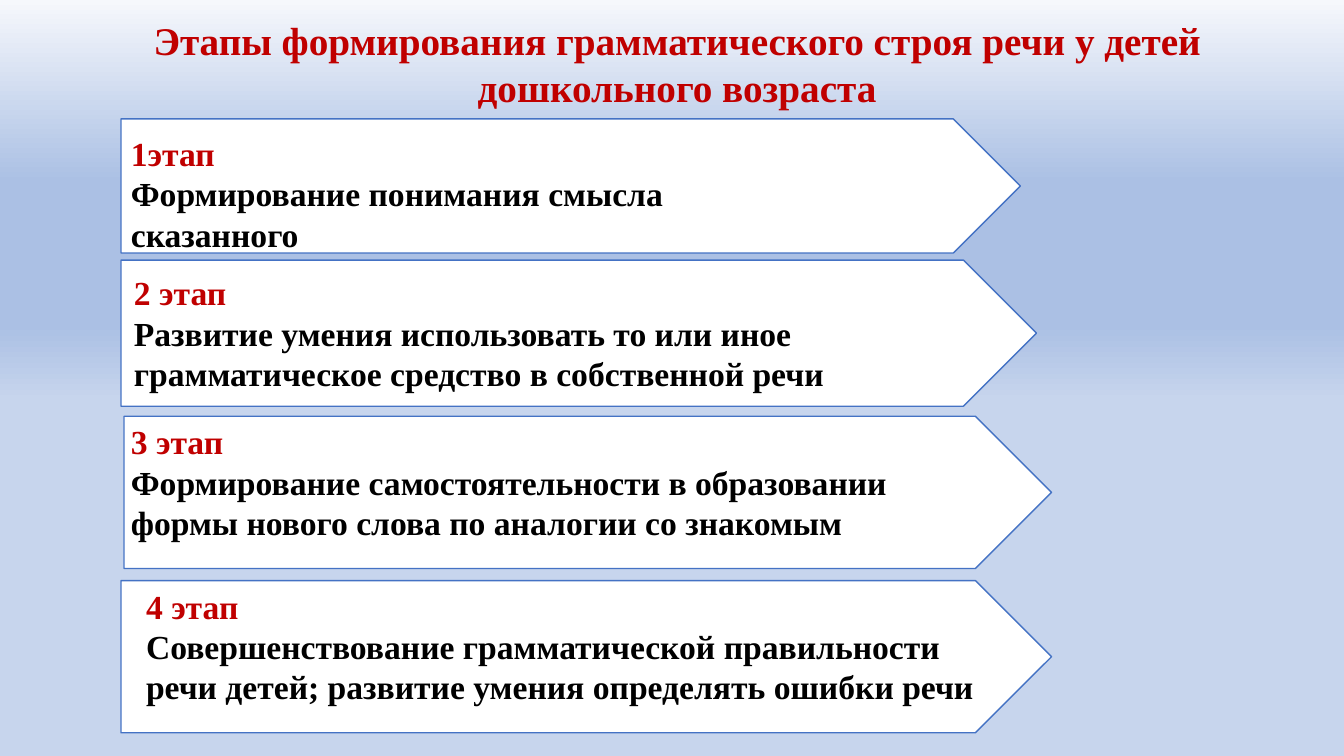
"""Build a slide with the four stages of grammar development in preschoolers."""
import copy
import pptx
import pptx.util
import pptx.dml.color
import pptx.enum.shapes
import pptx.enum.text
import pptx.oxml.ns

Inches = pptx.util.Inches
RED, BLACK, WHITE, BLUE = "C00000", "000000", "FFFFFF", "4472C4"
STOPS = [(0, "F6F8FC"), (0.24, "ABC0E4"), (0.43, "ABC0E4"), (0.53, "C7D5ED")]
TITLE = "Этапы формирования грамматического строя речи у детей дошкольного возраста"
STAGES = [
    {"head": "1этап", "body": "Формирование понимания смысла сказанного",
     "arrow": (1.2, 1.18, 8.92, 1.33), "text": (1.2, 1.27, 6.83, 1.31)},
    {"head": "2 этап",
     "body": "Развитие умения использовать то или иное грамматическое средство в собственной речи",
     "arrow": (1.2, 2.58, 9.08, 1.45), "text": (1.23, 2.65, 7.23, 1.31)},
    {"head": "3 этап",
     "body": "Формирование самостоятельности в образовании формы нового слова по аналогии со знакомым",
     "arrow": (1.23, 4.13, 9.2, 1.51), "text": (1.2, 4.13, 7.84, 1.31)},
    {"head": "4 этап",
     "body": "Совершенствование грамматической правильности речи детей; развитие умения определять ошибки речи",
     "arrow": (1.2, 5.76, 9.23, 1.51), "text": (1.35, 5.76, 8.59, 1.31)},
]


def tint(hue):
    return pptx.dml.color.RGBColor.from_string(hue)


def paint(slide):
    fill = slide.background.fill
    fill.gradient()
    fill.gradient_angle = 270
    group = next(slide.element.iter(pptx.oxml.ns.qn("a:gsLst")))
    for _ in STOPS[2:]:
        group.append(copy.deepcopy(group[0]))
    for stop, (place, hue) in zip(fill.gradient_stops, STOPS):
        stop.position = place
        stop.color.rgb = tint(hue)


def arrow(slide, box):
    kind = pptx.enum.shapes.MSO_SHAPE.PENTAGON
    shape = slide.shapes.add_shape(kind, *map(Inches, box))
    shape.shadow.inherit = False
    shape.fill.solid()
    shape.fill.fore_color.rgb = tint(WHITE)
    shape.line.color.rgb = tint(BLUE)
    shape.line.width = pptx.util.Pt(1)


def write(slide, box, lines, size, align):
    frame = slide.shapes.add_textbox(*map(Inches, box)).text_frame
    frame.word_wrap = True
    frame.auto_size = pptx.enum.text.MSO_AUTO_SIZE.SHAPE_TO_FIT_TEXT
    look = {"name": "Times New Roman", "size": pptx.util.Pt(size), "bold": True}
    for rank, (words, hue) in enumerate(lines):
        para = frame.add_paragraph() if rank else frame.paragraphs[0]
        para.alignment = align
        run = para.add_run()
        run.text = words
        for key, value in look.items():
            setattr(run.font, key, value)
        run.font.color.rgb = tint(hue)


def main():
    deck = pptx.Presentation()
    deck.slide_width, deck.slide_height = Inches(13.33), Inches(7.5)
    slide = deck.slides.add_slide(deck.slide_layouts[6])
    side = pptx.enum.text.PP_ALIGN
    paint(slide)
    for stage in STAGES:
        arrow(slide, stage["arrow"])
    write(slide, (0.47, 0.11, 12.49, 1.35), [(TITLE, RED)], 28, side.CENTER)
    for stage in STAGES:
        lines = [(stage["head"], RED), (stage["body"], BLACK)]
        write(slide, stage["text"], lines, 24, side.LEFT)
    deck.save("out.pptx")


if __name__ == "__main__":
    main()
